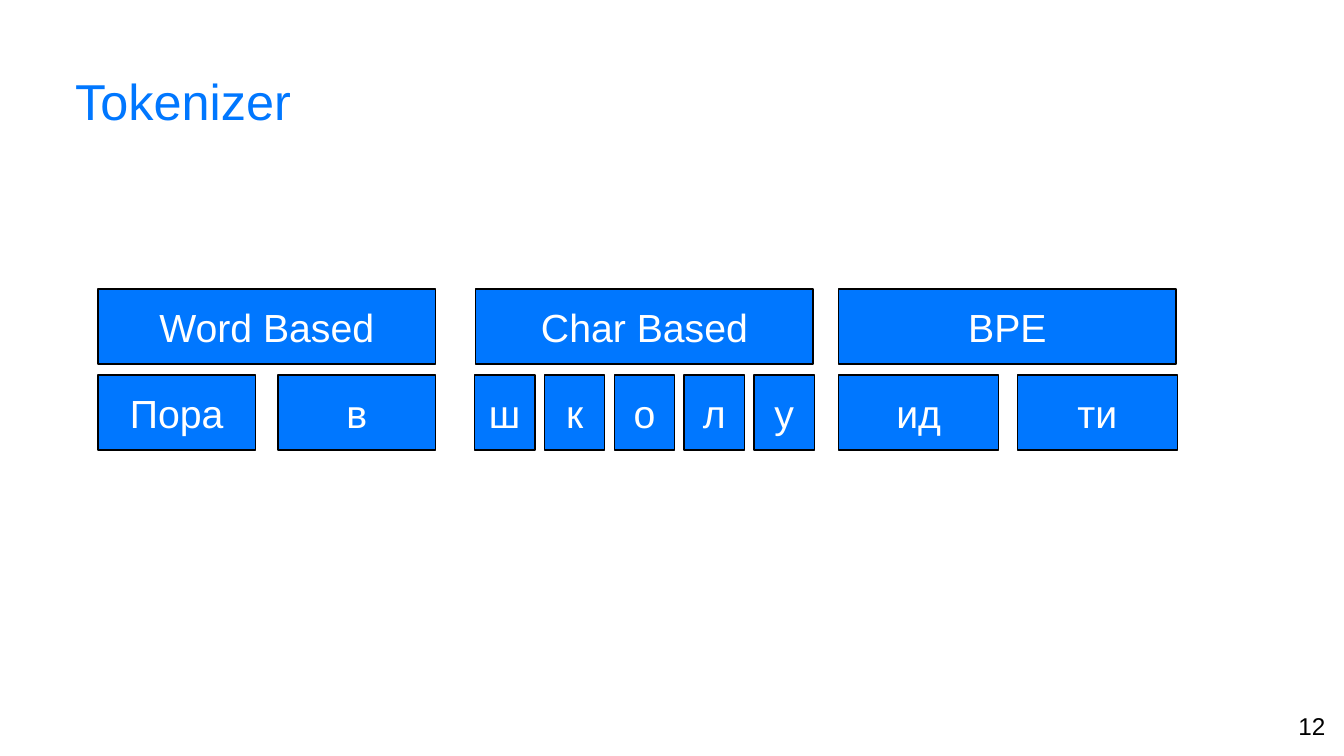
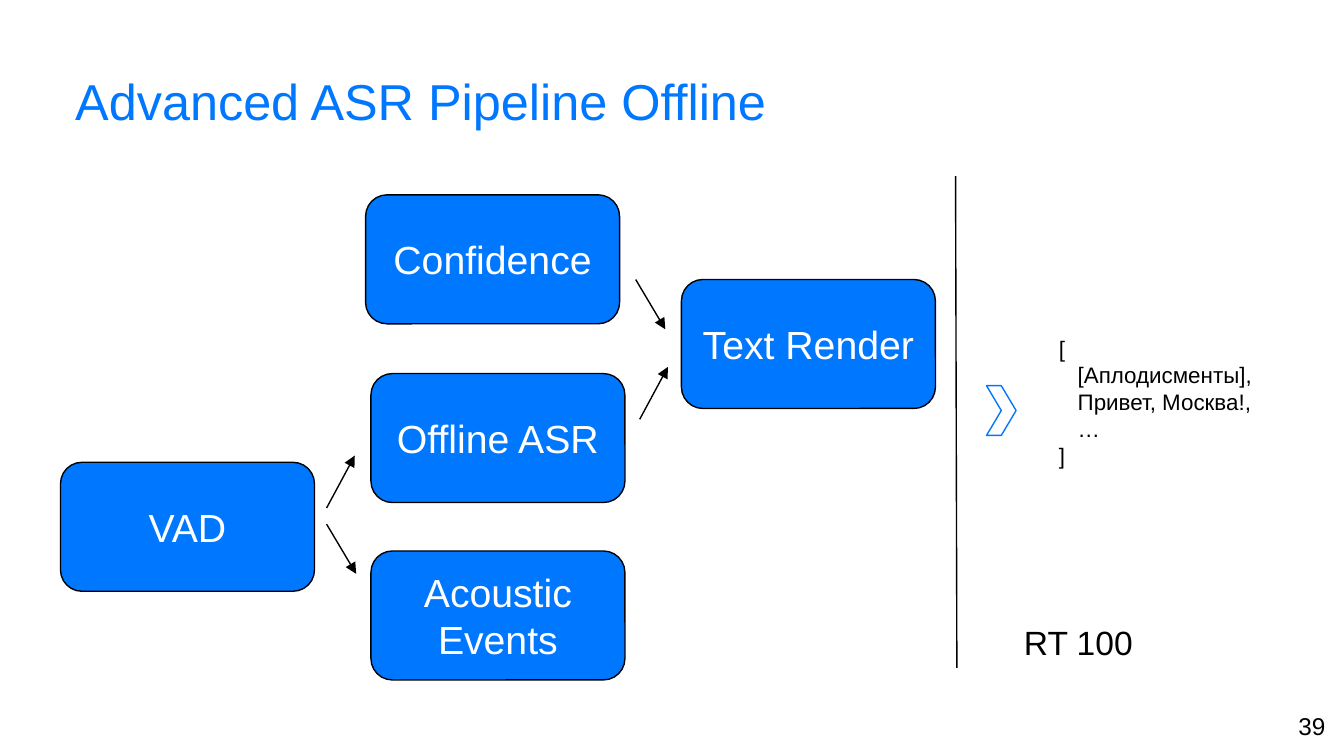
import pptx
import pptx.dml.color
import pptx.enum.shapes
import pptx.enum.text
import pptx.oxml.ns
import pptx.util
from lxml import etree

Inches = pptx.util.Inches
Pt = pptx.util.Pt
color = pptx.dml.color.RGBColor.from_string
qn = pptx.oxml.ns.qn
SHAPES = pptx.enum.shapes.MSO_SHAPE
ALIGN = pptx.enum.text.PP_ALIGN
ANCHOR = pptx.enum.text.MSO_ANCHOR

BLUE, BLACK, WHITE = "0077FF", "000000", "FFFFFF"
FONT = "Arial"
LINE_WIDTH = Pt(0.75)


def write_text(shape, lines, size, text_color, align=ALIGN.LEFT, anchor=ANCHOR.TOP, inset=0.1):
    frame = shape.text_frame
    frame.word_wrap = True
    frame.vertical_anchor = anchor
    frame.margin_left = frame.margin_right = Inches(inset)
    frame.margin_top = frame.margin_bottom = Inches(inset)
    for index, line in enumerate(lines):
        paragraph = frame.add_paragraph() if index else frame.paragraphs[0]
        paragraph.alignment = align
        run = paragraph.add_run()
        run.text = line
        run.font.name = FONT
        run.font.size = Pt(size)
        run.font.color.rgb = color(text_color)
    return frame


def add_block(slide, kind, left, top, width, height, label="", fill=BLUE, line=BLACK):
    shape = slide.shapes.add_shape(kind, Inches(left), Inches(top), Inches(width), Inches(height))
    shape.shadow.inherit = False
    shape.fill.solid()
    shape.fill.fore_color.rgb = color(fill)
    shape.line.color.rgb = color(line)
    shape.line.width = LINE_WIDTH
    if label:
        write_text(shape, [label], 21, WHITE, ALIGN.CENTER, ANCHOR.MIDDLE)
    return shape


# Widescreen 16:9
presentation = pptx.Presentation()
presentation.slide_width = Inches(10)
presentation.slide_height = presentation.slide_width * 9 // 16

# Slides with their shared title and page number
slides = []
for title, number in [("Tokenizer", "12"), ("Advanced ASR Pipeline Offline", "39")]:
    slide = presentation.slides.add_slide(presentation.slide_layouts[6])
    slide.background.fill.solid()
    slide.background.fill.fore_color.rgb = color(WHITE)
    title_box = slide.shapes.add_textbox(Inches(0.56), Inches(0.57), Inches(8.9), Inches(0.53))
    title_frame = write_text(title_box, [title], 27, BLUE, inset=0)
    title_frame.paragraphs[0].line_spacing = 0.9
    number_box = slide.shapes.add_textbox(Inches(9.36), Inches(5.19), Inches(0.6), Inches(0.43))
    write_text(number_box, [number], 13, BLACK, ALIGN.RIGHT)
    slides.append(slide)
tokenizer_slide, pipeline_slide = slides

# Tokenizers: a heading above a row of evenly spaced tokens
row_height = 0.56
tokenizers = [
    ("Word Based", 0.73, ["Пора", "в"], 0.73, 1.17, 1.34),
    ("Char Based", 3.54, ["ш", "к", "о", "л", "у"], 3.53, 0.45, 0.52),
    ("BPE", 6.24, ["ид", "ти"], 6.24, 1.19, 1.33),
]
for heading, heading_left, tokens, token_left, token_width, pitch in tokenizers:
    add_block(tokenizer_slide, SHAPES.RECTANGLE, heading_left, 2.15, 2.51, row_height, heading)
    for index, token in enumerate(tokens):
        add_block(tokenizer_slide, SHAPES.RECTANGLE, token_left + index * pitch, 2.79,
                  token_width, row_height, token)

# Pipeline stages
stages = [
    ("VAD", 0.45, 3.44),
    ("Confidence", 2.72, 1.45),
    ("Text Render", 5.07, 2.08),
    ("Acoustic Events", 2.76, 4.1),
    ("Offline ASR", 2.76, 2.78),
]
for label, left, top in stages:
    add_block(pipeline_slide, SHAPES.ROUNDED_RECTANGLE, left, top, 1.89, 0.96, label)

# Arrows between stages, and the plain divider before the output
connectors = [
    (2.43, 3.78, 2.64, 3.39, True),
    (4.76, 3.12, 4.97, 2.73, True),
    (2.43, 3.9, 2.65, 4.27, True),
    (4.73, 2.08, 4.95, 2.45, True),
    (7.11, 1.31, 7.12, 4.97, False),
]
for start_x, start_y, end_x, end_y, has_arrow in connectors:
    connector = pipeline_slide.shapes.add_connector(
        pptx.enum.shapes.MSO_CONNECTOR.STRAIGHT,
        Inches(start_x), Inches(start_y), Inches(end_x), Inches(end_y))
    connector.line.color.rgb = color(BLACK)
    connector.line.width = LINE_WIDTH
    if has_arrow:
        etree.SubElement(connector.line._get_or_add_ln(), qn("a:tailEnd"), type="triangle")
    etree.SubElement(connector._element.spPr, qn("a:effectLst"))

# Output: chevron, recognised text and speed
add_block(pipeline_slide, SHAPES.CHEVRON, 7.34, 2.87, 0.22, 0.37, fill=WHITE, line=BLUE)
output_box = pipeline_slide.shapes.add_textbox(Inches(7.78), Inches(2.39), Inches(1.75), Inches(1.51))
output_lines = ["[", "[Аплодисменты],", "Привет, Москва!,", "…", "]"]
output_frame = write_text(output_box, output_lines, 12, BLACK)
for paragraph in output_frame.paragraphs[1:-1]:
    paragraph._p.get_or_add_pPr().set("marL", str(Inches(0.14)))
speed_box = pipeline_slide.shapes.add_textbox(Inches(7.52), Inches(4.53), Inches(1.67), Inches(0.6))
write_text(speed_box, ["RT 100"], 18, BLACK)

presentation.save("out.pptx")
